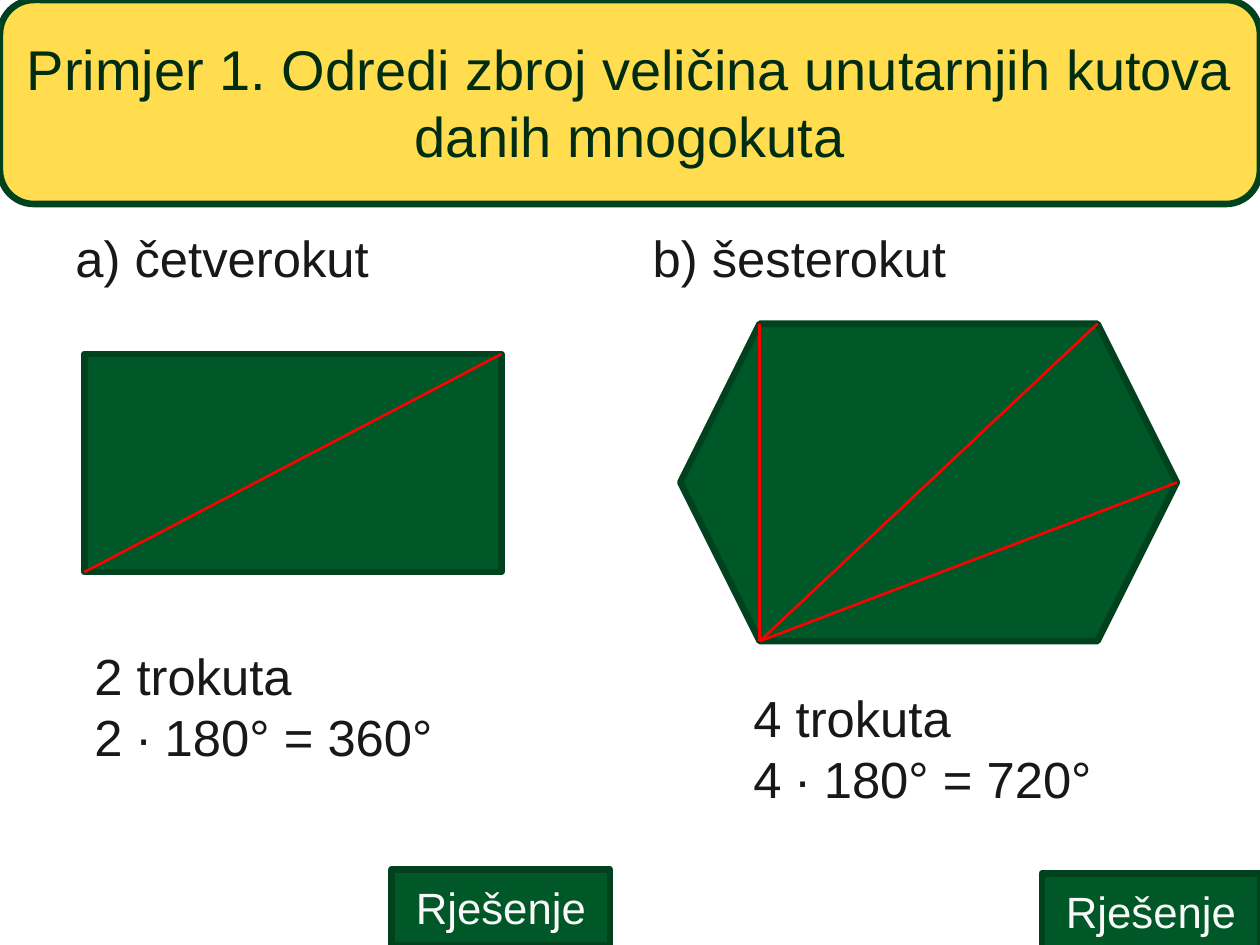
from pptx import Presentation
from pptx.dml.color import RGBColor
from pptx.enum.shapes import MSO_CONNECTOR, MSO_SHAPE
from pptx.enum.text import MSO_ANCHOR, PP_ALIGN
from pptx.oxml.ns import qn
from pptx.util import Pt

COLORS = {
    "banner": "FFDD4F",
    "green": "005828",
    "border": "00411E",
    "title": "002C14",
    "text": "181818",
    "button_text": "F8F8F8",
    "diagonal": "FF0000",
}


def color(name):
    return RGBColor.from_string(COLORS[name])


def write(shape, text, size, ink, align=PP_ALIGN.LEFT, anchor=MSO_ANCHOR.TOP):
    frame = shape.text_frame
    frame.word_wrap = True
    frame.vertical_anchor = anchor
    frame.text = text
    for para in frame.paragraphs:
        para.alignment = align
        for span in para.runs:
            span.font.name = "Arial"
            span.font.size = Pt(size)
            span.font.color.rgb = color(ink)


def add_text(page, bounds, text, size=29, ink="text", **layout):
    box = page.shapes.add_textbox(*map(Pt, bounds))
    write(box, text, size, ink, **layout)


def add_figure(page, kind, bounds, fill="green"):
    figure = page.shapes.add_shape(kind, *map(Pt, bounds))
    figure.shadow.inherit = False
    figure.fill.solid()
    figure.fill.fore_color.rgb = color(fill)
    figure.line.color.rgb = color("border")
    figure.line.width = Pt(3.78)
    return figure


def add_button(page, left, top):
    button = add_figure(page, MSO_SHAPE.ACTION_BUTTON_CUSTOM, (left, top, 124.6, 43.2))
    write(button, "Rješenje", 25, "button_text", PP_ALIGN.CENTER, MSO_ANCHOR.MIDDLE)


def add_diagonals(page, start, ends):
    """Draw the diagonals that leave one corner of a polygon."""
    for end in ends:
        line = page.shapes.add_connector(MSO_CONNECTOR.STRAIGHT, *map(Pt, start + end))
        line.line.color.rgb = color("diagonal")
        line.line.width = Pt(1.5)
        properties = line._element.spPr
        properties.append(properties.makeelement(qn("a:effectLst"), {}))


def add_quadrilateral(page):
    left, top, width, height = bounds = (48.2, 202.3, 238.3, 124.6)
    add_figure(page, MSO_SHAPE.RECTANGLE, bounds)
    add_diagonals(page, (left, top + height), [(left + width, top)])


def add_hexagon(page):
    left, top, width, height = bounds = (388.8, 185, 283.7, 181.4)
    add_figure(page, MSO_SHAPE.HEXAGON, bounds)
    inset = height / 4
    right, bottom = left + width, top + height
    add_diagonals(
        page,
        (left + inset, bottom),
        [(left + inset, top), (right - inset, top), (right, top + height / 2)],
    )


def main():
    deck = Presentation()
    deck.slide_width, deck.slide_height = Pt(720), Pt(540)
    page = deck.slides.add_slide(deck.slide_layouts[6])

    add_figure(page, MSO_SHAPE.ROUNDED_RECTANGLE, (0, 0, 720, 116.6), "banner")
    add_text(
        page,
        (0, 2.2, 720, 111.6),
        "Primjer 1. Odredi zbroj veličina unutarnjih kutova danih mnogokuta",
        32,
        "title",
        align=PP_ALIGN.CENTER,
        anchor=MSO_ANCHOR.MIDDLE,
    )
    add_text(page, (36, 126, 318.2, 356.4), "a) četverokut")
    add_text(page, (365.8, 126, 318.2, 356.4), "b) šesterokut")

    add_quadrilateral(page)
    add_hexagon(page)

    add_text(page, (46.8, 365, 249, 77.8), "2 trokuta\n2 ∙ 180° = 360°")
    add_text(page, (423.4, 388.8, 249, 77.8), "4 trokuta\n4 ∙ 180° = 720°")

    add_button(page, 223.9, 496.8)
    add_button(page, 595.4, 499)

    deck.save("out.pptx")


if __name__ == "__main__":
    main()
